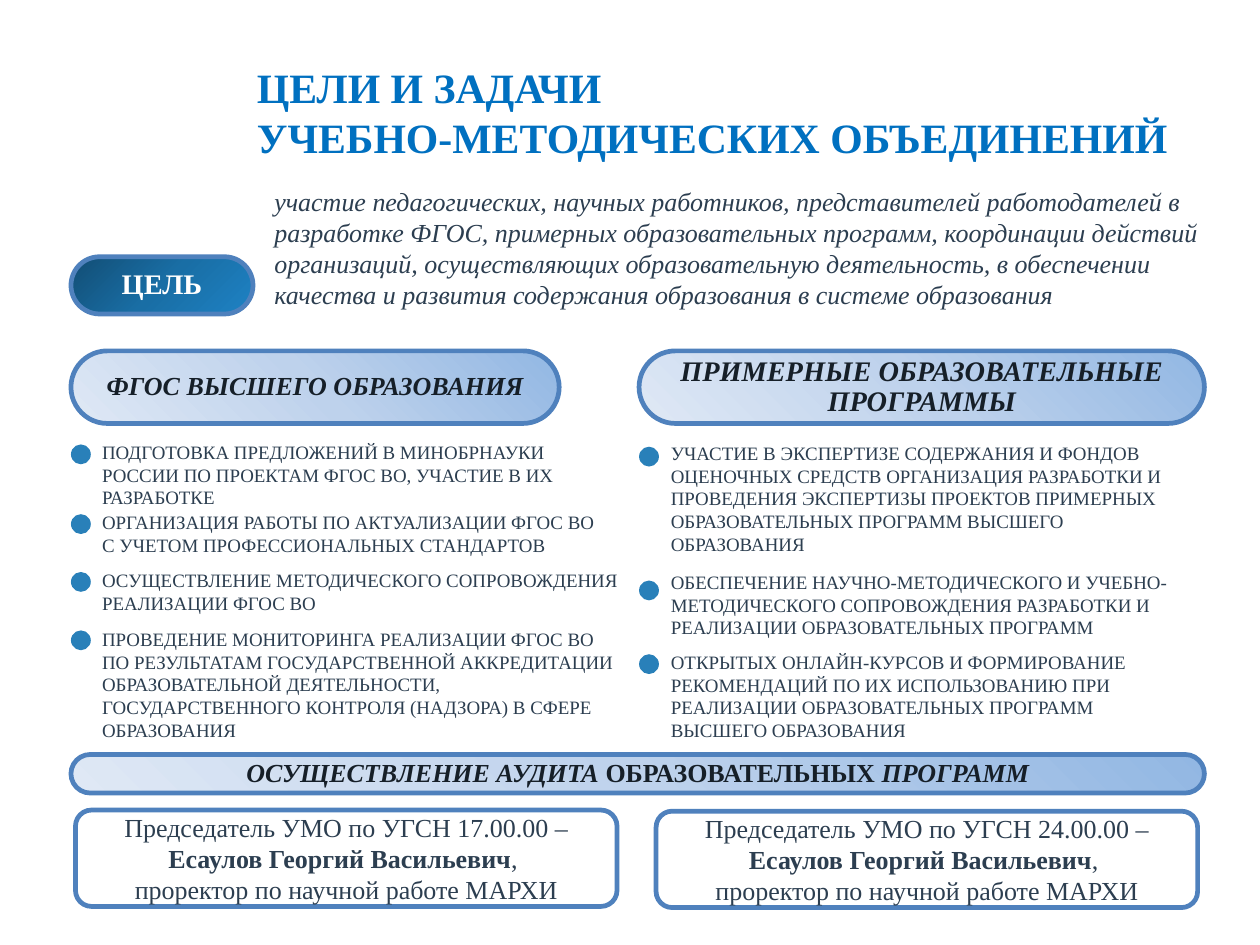
from dataclasses import dataclass

from pptx import Presentation
from pptx import util as u
from pptx.dml import color
from pptx.enum import shapes, text as txt
from pptx.oxml import ns, parse_xml

SLIDE_W, SLIDE_H = u.Inches(22.22), u.Inches(16.67)


@dataclass(frozen=True)
class Theme:
    font: str = "Times New Roman"
    title: str = "0070C0"
    body: str = "2C3E50"
    heading: str = "161F28"
    white: str = "FFFFFF"
    outline: str = "4F81BD"
    dot: str = "2980B9"
    goal_stops: tuple = ("124D74", "196EA5", "1E82C4")
    heading_stops: tuple = ("92B7E3", "BED2EC", "DFE8F5")
    title_size: int = 53
    large: int = 36
    medium: int = 33
    small: int = 24
    border: int = 6


THEME = Theme()
LEFT, RIGHT = 5.63, 50.72  # left edges of the two halves, in columns
HEADING_ROW, DOT_ROWS = 37.13, 2.1

# Each task: text, space before in points, row of its dot
STANDARD_TASKS = [
    ("ПОДГОТОВКА ПРЕДЛОЖЕНИЙ В МИНОБРНАУКИ РОССИИ ПО ПРОЕКТАМ ФГОС ВО, "
     "УЧАСТИЕ В ИХ РАЗРАБОТКЕ", 0, 47.03),
    ("ОРГАНИЗАЦИЯ РАБОТЫ ПО АКТУАЛИЗАЦИИ ФГОС ВО\n"
     "С УЧЕТОМ ПРОФЕССИОНАЛЬНЫХ СТАНДАРТОВ", 3, 54.41),
    ("ОСУЩЕСТВЛЕНИЕ МЕТОДИЧЕСКОГО СОПРОВОЖДЕНИЯ РЕАЛИЗАЦИИ ФГОС ВО", 16, 60.53),
    ("ПРОВЕДЕНИЕ МОНИТОРИНГА РЕАЛИЗАЦИИ ФГОС ВО ПО РЕЗУЛЬТАТАМ "
     "ГОСУДАРСТВЕННОЙ АККРЕДИТАЦИИ ОБРАЗОВАТЕЛЬНОЙ ДЕЯТЕЛЬНОСТИ, "
     "ГОСУДАРСТВЕННОГО КОНТРОЛЯ (НАДЗОРА) В СФЕРЕ ОБРАЗОВАНИЯ", 17, 66.71),
]
PROGRAM_TASKS = [
    ("УЧАСТИЕ В ЭКСПЕРТИЗЕ СОДЕРЖАНИЯ И ФОНДОВ ОЦЕНОЧНЫХ СРЕДСТВ ОРГАНИЗАЦИЯ "
     "РАЗРАБОТКИ И ПРОВЕДЕНИЯ ЭКСПЕРТИЗЫ ПРОЕКТОВ ПРИМЕРНЫХ ОБРАЗОВАТЕЛЬНЫХ "
     "ПРОГРАММ ВЫСШЕГО ОБРАЗОВАНИЯ", 0, 47.27),
    ("ОБЕСПЕЧЕНИЕ НАУЧНО-МЕТОДИЧЕСКОГО И УЧЕБНО-МЕТОДИЧЕСКОГО СОПРОВОЖДЕНИЯ "
     "РАЗРАБОТКИ И РЕАЛИЗАЦИИ ОБРАЗОВАТЕЛЬНЫХ ПРОГРАММ", 20, 61.43),
    ("ОТКРЫТЫХ ОНЛАЙН-КУРСОВ И ФОРМИРОВАНИЕ РЕКОМЕНДАЦИЙ ПО ИХ ИСПОЛЬЗОВАНИЮ "
     "ПРИ РЕАЛИЗАЦИИ ОБРАЗОВАТЕЛЬНЫХ ПРОГРАММ ВЫСШЕГО ОБРАЗОВАНИЯ", 15, 69.23),
]


def grid(col, row, cols, rows):
    """Box on a grid of 100 columns by 100 rows."""
    return [round(share * side / 100) for share, side in
            ((col, SLIDE_W), (row, SLIDE_H), (cols, SLIDE_W), (rows, SLIDE_H))]


def rgb(value):
    return color.RGBColor.from_string(value)


def write(frame, content, *, size, ink, bold=False, italic=False, toggle="",
          align=txt.PP_ALIGN.LEFT, spacing=None, before=0, plain=False):
    """Append text: \\n starts a paragraph, \\v a line, | flips the toggle format."""
    for index, line in enumerate(content.split("\n")):
        paragraph = frame.paragraphs[-1]
        if paragraph.runs:
            paragraph = frame.add_paragraph()
        if plain:  # no bullet and no indent
            props = paragraph._p.get_or_add_pPr()
            props.set("marL", "0")
            props.set("indent", "0")
            props.append(parse_xml(f'<a:buNone {ns.nsdecls("a")}/>'))
        paragraph.alignment = align
        paragraph.space_before = u.Pt(0 if index else before)
        if spacing:
            paragraph.line_spacing = spacing
        for part, words in enumerate(line.split("|")):
            flip = part % 2 == 1
            for number, piece in enumerate(words.split("\v")):
                if number:
                    paragraph.add_line_break()
                run = paragraph.add_run()
                run.text = piece
                font = run.font
                font.name, font.size = THEME.font, u.Pt(size)
                font.bold = bold ^ (flip and toggle == "bold")
                font.italic = italic ^ (flip and toggle == "italic")
                font.color.rgb = rgb(ink)


def set_frame(frame, anchor, side=0.1, edge=0.05):
    frame.word_wrap = True
    frame.auto_size = txt.MSO_AUTO_SIZE.NONE
    frame.vertical_anchor = anchor
    frame.margin_left = frame.margin_right = u.Inches(side)
    frame.margin_top = frame.margin_bottom = u.Inches(edge)
    return frame


def place(holder, box):
    holder.left, holder.top, holder.width, holder.height = box


def gradient(shape, stops, direction):
    shape.fill.gradient()
    grad = shape._element.spPr.find(ns.qn("a:gradFill"))
    for child in list(grad):
        grad.remove(child)
    marks = "".join(f'<a:gs pos="{index * 50000}"><a:srgbClr val="{stop}"/></a:gs>'
                    for index, stop in enumerate(stops))
    grad.append(parse_xml(f'<a:gsLst {ns.nsdecls("a")}>{marks}</a:gsLst>'))
    grad.append(parse_xml(direction))


def outlined(slide, box):
    shape = slide.shapes.add_shape(shapes.MSO_SHAPE.ROUNDED_RECTANGLE, *box)
    shape.shadow.inherit = False
    shape.line.color.rgb = rgb(THEME.outline)
    shape.line.width = u.Pt(THEME.border)
    return shape


def pill(slide, box, label, goal=False, **fmt):
    shape = outlined(slide, box)
    shape.adjustments[0] = 0.5
    if goal:
        gradient(shape, THEME.goal_stops,
                 f'<a:path {ns.nsdecls("a")} path="circle">'
                 '<a:fillToRect r="100000" b="100000"/></a:path>')
    else:
        gradient(shape, THEME.heading_stops,
                 f'<a:lin {ns.nsdecls("a")} ang="{135 * 60000}" scaled="0"/>')
    write(set_frame(shape.text_frame, txt.MSO_ANCHOR.MIDDLE), label, bold=True,
          ink=THEME.white if goal else THEME.heading, italic=not goal,
          align=txt.PP_ALIGN.CENTER, spacing=0.9, **fmt)


def task_list(slide, holder, box, dot_col, tasks):
    place(holder, box)
    frame = set_frame(holder.text_frame, txt.MSO_ANCHOR.TOP)
    for task, gap, dot_row in tasks:
        write(frame, task, size=THEME.small, ink=THEME.body, before=gap, plain=True)
        left, top, _, side = grid(dot_col, dot_row, 0, DOT_ROWS)
        dot = slide.shapes.add_shape(shapes.MSO_SHAPE.OVAL, left, top, side, side)
        dot.shadow.inherit = False
        dot.fill.solid()
        dot.fill.fore_color.rgb = rgb(THEME.dot)
        dot.line.fill.background()


def chair_card(slide, col, row, code):
    card = outlined(slide, grid(col, row, 42.98, 10.2))
    card.fill.solid()
    card.fill.fore_color.rgb = rgb(THEME.white)
    write(set_frame(card.text_frame, txt.MSO_ANCHOR.MIDDLE, 0.22, 0.11),
          f"Председатель УМО по УГСН {code} – |Есаулов Георгий Васильевич|, \n"
          "проректор по научной работе МАРХИ",
          size=THEME.medium, ink=THEME.body, toggle="bold", align=txt.PP_ALIGN.CENTER)


def main():
    deck = Presentation()
    deck.slide_width, deck.slide_height = SLIDE_W, SLIDE_H
    slide = deck.slides.add_slide(deck.slide_layouts[3])

    # Title
    title = slide.shapes.title
    place(title, grid(19.4, 5.52, 78, 12.6))
    write(set_frame(title.text_frame, txt.MSO_ANCHOR.MIDDLE, 0.22, 0.11),
          "ЦЕЛИ И ЗАДАЧИ \vУЧЕБНО-МЕТОДИЧЕСКИХ ОБЪЕДИНЕНИЙ",
          size=THEME.title_size, ink=THEME.title, bold=True)

    # Goal
    pill(slide, grid(LEFT, 27.17, 14.45, 6.06), "ЦЕЛЬ", goal=True, size=THEME.large)
    goal = slide.shapes.add_textbox(*grid(21.33, 19.32, 74.26, 13.92))
    write(set_frame(goal.text_frame, txt.MSO_ANCHOR.TOP),
          "участие педагогических, научных работников, представителей работодателей "
          "в разработке ФГОС, примерных образовательных программ, координации действий "
          "организаций, осуществляющих образовательную деятельность, в обеспечении "
          "качества и развития содержания образования в системе образования",
          size=THEME.medium, ink=THEME.body, italic=True)

    # Two columns of tasks
    pill(slide, grid(LEFT, HEADING_ROW, 38.75, 7.68), "ФГОС ВЫСШЕГО ОБРАЗОВАНИЯ",
         size=THEME.medium)
    pill(slide, grid(RIGHT, HEADING_ROW, 44.87, 7.68),
         "ПРИМЕРНЫЕ ОБРАЗОВАТЕЛЬНЫЕ ПРОГРАММЫ", size=THEME.large)
    task_list(slide, slide.placeholders[1], grid(7.65, 46.31, 41.85, 32.4),
              LEFT, STANDARD_TASKS)
    task_list(slide, slide.placeholders[2], grid(52.79, 46.43, 42.12, 32.4),
              RIGHT, PROGRAM_TASKS)

    # Audit bar and chairs
    pill(slide, grid(LEFT, 79.84, 89.96, 4.08),
         "ОСУЩЕСТВЛЕНИЕ АУДИТА |ОБРАЗОВАТЕЛЬНЫХ| ПРОГРАММ",
         size=THEME.medium, toggle="italic")
    chair_card(slide, 5.99, 85.72, "17.00.00")
    chair_card(slide, 52.07, 85.84, "24.00.00")

    deck.save("out.pptx")


if __name__ == "__main__":
    main()
